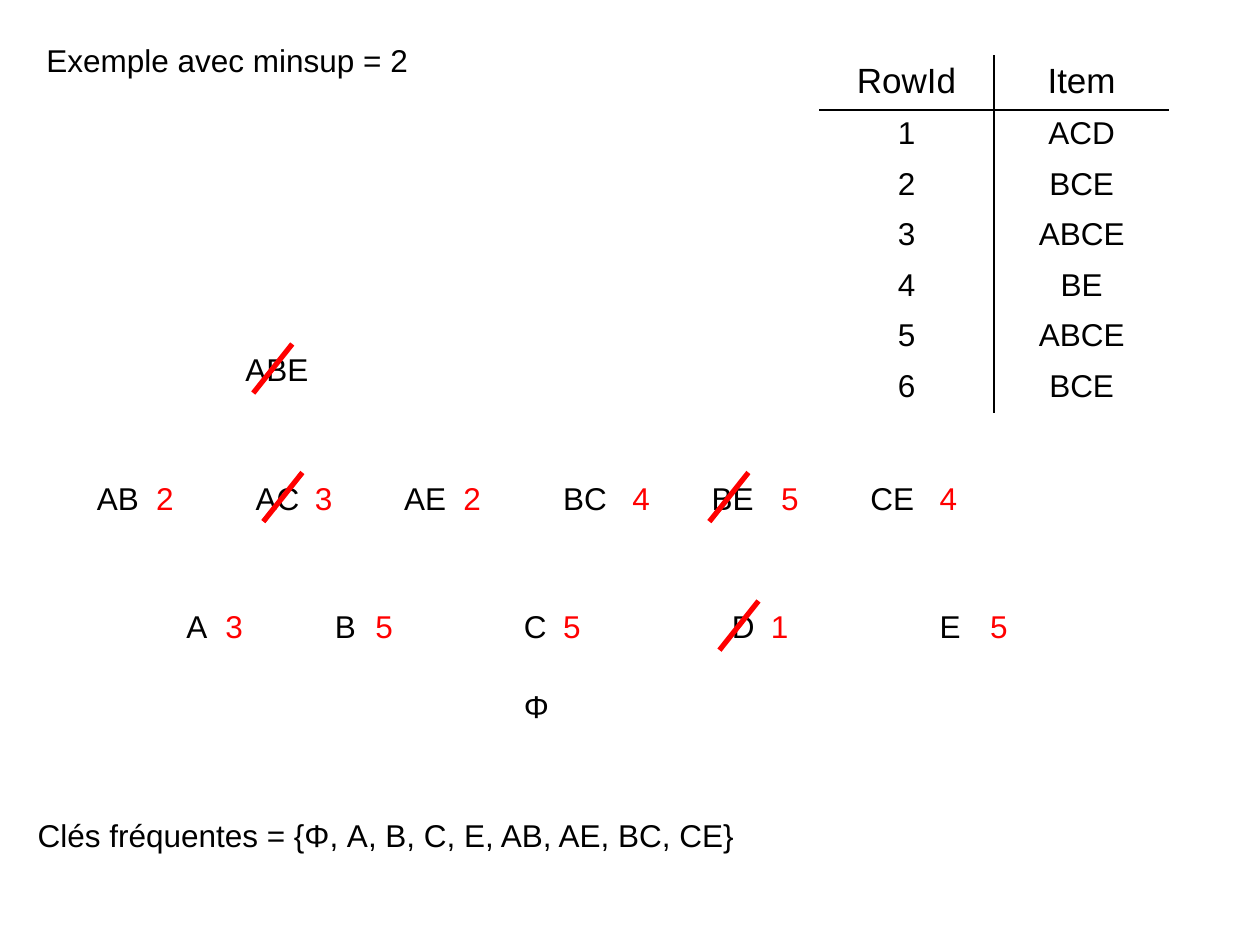
from lxml.etree import SubElement
from pptx import Presentation
from pptx.dml.color import RGBColor
from pptx.enum.shapes import MSO_CONNECTOR as Connector
from pptx.enum.text import MSO_AUTO_SIZE as AutoSize, PP_ALIGN as Align
from pptx.oxml.ns import qn
from pptx.util import Inches, Pt

COLUMNS, ROWS = 100, 75  # layout grid of the slide
BLACK, RED = "000000", "FF0000"


def color(hex_text):
    return RGBColor.from_string(hex_text)


def write(frame, text, size=18, ink=BLACK, font="Arial", align=Align.LEFT):
    paragraph = frame.paragraphs[0]
    paragraph.alignment = align
    run = paragraph.add_run()
    run.text = text
    run.font.size, run.font.name = Pt(size), font
    run.font.color.rgb = color(ink)


class SlideBuilder:
    """Holds the style and the current slide; lengths are grid units."""

    line_height = 4
    strike_size = 3.1, 3.9
    strike_width = 3
    border_width = 1

    def __init__(self, presentation):
        self.slide = presentation.slides.add_slide(presentation.slide_layouts[6])
        self.column = presentation.slide_width / COLUMNS
        self.row = presentation.slide_height / ROWS

    def x(self, columns):
        return round(columns * self.column)

    def y(self, rows):
        return round(rows * self.row)

    def text(self, text, left, top, width, **style):
        shape = self.slide.shapes.add_textbox(
            self.x(left), self.y(top), self.x(width), self.y(self.line_height))
        shape.text_frame.word_wrap = True
        shape.text_frame.auto_size = AutoSize.SHAPE_TO_FIT_TEXT
        write(shape.text_frame, text, **style)

    def strike(self, left, top):
        width, height = self.strike_size
        line = self.slide.shapes.add_connector(
            Connector.STRAIGHT, self.x(left), self.y(top + height),
            self.x(left + width), self.y(top))
        line.line.color.rgb = color(RED)
        line.line.width = Pt(self.strike_width)
        SubElement(line._element.spPr, qn("a:effectLst"))

    def borders(self, cell, visible):
        properties = cell._tc.get_or_add_tcPr()
        for side in "LRTB":
            border = SubElement(properties, qn(f"a:ln{side}"),
                                w=str(Pt(self.border_width)))
            if side in visible:
                fill = SubElement(border, qn("a:solidFill"))
                SubElement(fill, qn("a:srgbClr"), val=BLACK)
            else:
                SubElement(border, qn("a:noFill"))

    def table(self, records, left, top, width, header_height, row_height):
        height = header_height + row_height * (len(records) - 1)
        table = self.slide.shapes.add_table(
            len(records), len(records[0]), self.x(left), self.y(top),
            self.x(width), self.y(height)).table
        table.first_row = table.horz_banding = False
        for i, record in enumerate(records):
            table.rows[i].height = self.y(row_height if i else header_height)
            for j, value in enumerate(record):
                cell = table.cell(i, j)
                # One rule under the header, one between the columns
                sides = ("L" if j else "R") + {0: "B", 1: "T"}.get(i, "")
                self.borders(cell, sides)
                cell.fill.background()
                write(cell.text_frame, value, size=18 if i else 20,
                      align=Align.CENTER)


def main():
    presentation = Presentation()
    presentation.slide_width, presentation.slide_height = Inches(10), Inches(7.5)
    builder = SlideBuilder(presentation)

    # Heading and transactions
    builder.text("Exemple avec minsup = 2", 2.7, 2.8, 62.2)
    items = ["ACD", "BCE", "ABCE", "BE", "ABCE", "BCE"]
    records = [("RowId", "Item")]
    records += [(str(number), item) for number, item in enumerate(items, 1)]
    builder.table(records, 65, 4.4, 27.8, header_height=4.3, row_height=4)

    # Lattice levels: top, label width, then (itemset, left, support, support left)
    levels = [
        (27.3, 8.7, [("ABE", 18.5, None, None)]),
        (37.5, 5.5, [("AB", 6.7, 2, 11.4), ("AC", 19.3, 3, 24),
                     ("AE", 31.1, 2, 35.8), ("BC", 43.7, 4, 49.2),
                     ("BE", 55.5, 5, 61), ("CE", 68.1, 4, 73.6)]),
        (47.7, 3.9, [("A", 13.8, 3, 16.9), ("B", 25.6, 5, 28.8),
                     ("C", 40.6, 5, 43.7), ("D", 57.1, 1, 60.2),
                     ("E", 73.6, 5, 77.6)]),
        (54, 3.9, [("Φ", 40.6, None, None)]),
    ]
    # Pruned itemsets, with the start of the stroke
    pruned = {"ABE": 20.1, "AC": 20.9, "BE": 56.3, "D": 57.1}
    for top, width, itemsets in levels:
        for itemset, left, support, support_left in itemsets:
            builder.text(itemset, left, top, width)
            if support:
                builder.text(str(support), support_left, top, 3.2, ink=RED)
            if itemset in pruned:
                builder.strike(pruned[itemset], top)

    # Result
    builder.text("Clés fréquentes = {Φ, A, B, C, E, AB, AE, BC, CE}", 2, 64.3, 94.5)

    presentation.save("out.pptx")


if __name__ == "__main__":
    main()
